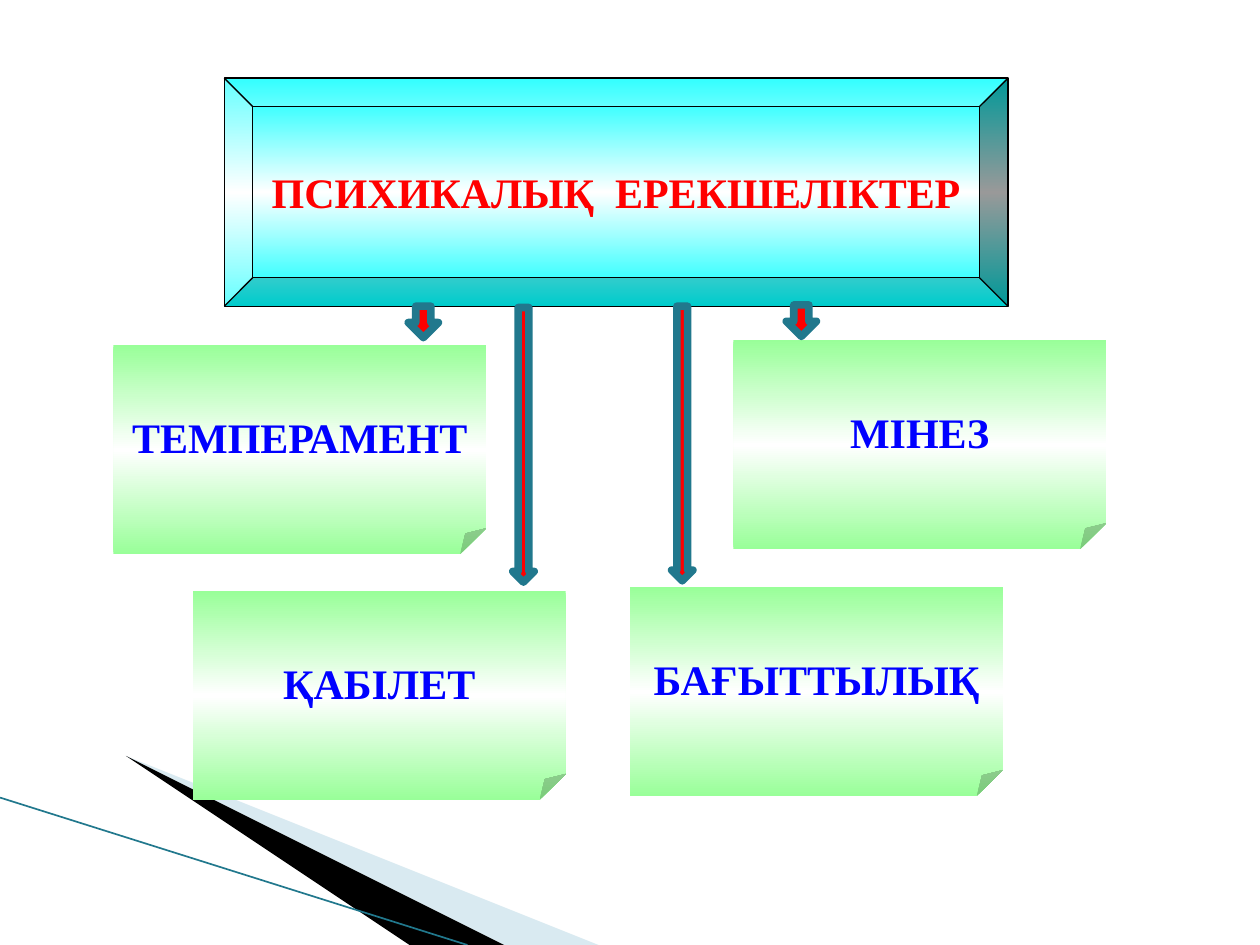
from copy import deepcopy

from lxml import etree
from pptx import Presentation
from pptx import util as u
from pptx.dml.color import RGBColor
from pptx.enum import shapes, text
from pptx.oxml.ns import qn

COLORS = {
    "cyan": "00FFFF", "green": "99FF99", "white": "FFFFFF", "black": "000000",
    "red": "FF0000", "blue": "0000FF", "teal": "21788D", "pale": "A0CBDC",
}
FONT = "Times New Roman"

HEADING = ("ПСИХИКАЛЫҚ  ЕРЕКШЕЛІКТЕР", 1.78, 0.62)
HEADING_SIZE = (6.22, 1.81)
NOTES = [
    ("ТЕМПЕРАМЕНТ", 0.9, 2.74),
    ("МІНЕЗ", 5.82, 2.7),
    ("ҚАБІЛЕТ", 1.53, 4.69),
    ("БАҒЫТТЫЛЫҚ", 5, 4.66),
]
NOTE_SIZE = (2.96, 1.66)

SHORT, LONG = (0.24, 0.25), (0.17, 2.18)
ARROWS = [(3.24, 2.43, SHORT), (6.24, 2.42, SHORT), (4.07, 2.44, LONG), (5.33, 2.43, LONG)]

# Corner points, colour, opacity in percent
WEDGES = [
    ([(0.55, 6.5), (5.95, 7.5), (4.56, 7.5)], "pale", 40),
    ([(0.53, 6.49), (4.57, 7.5), (3.72, 7.5)], "black", 100),
]
EDGE = [(0, 6.33), (3.71, 7.5)]


def rgb(name):
    return RGBColor.from_string(COLORS[name])


def add_preset(slide, kind, left, top, size):
    shape = slide.shapes.add_shape(kind, *map(u.Inches, (left, top, *size)))
    shape.shadow.inherit = False
    return shape


def set_corner(shape, share):
    """Set the bevel or fold depth as a share of the shorter side."""
    guides = shape._element.spPr.find(".//" + qn("a:avLst"))
    for guide in list(guides):
        guides.remove(guide)
    etree.SubElement(guides, qn("a:gd"), name="adj", fmla=f"val {round(share * 100000)}")


def fill_band(shape, color):
    """Vertical gradient: colour, white in the middle, colour again."""
    shape.fill.gradient()
    shape.fill.gradient_angle = 90
    stop_list = shape._element.spPr.find(".//" + qn("a:gsLst"))
    stop_list.insert(1, deepcopy(stop_list[0]))
    names = (color, "white", color)
    for stop, name, position in zip(shape.fill.gradient_stops, names, (0, 0.5, 1)):
        stop.color.rgb = rgb(name)
        stop.position = position


def add_label_shape(slide, kind, label, left, top, size, band, font_color):
    shape = add_preset(slide, kind, left, top, size)
    set_corner(shape, 0.125)
    fill_band(shape, band)
    frame = shape.text_frame
    frame.word_wrap = False
    frame.vertical_anchor = text.MSO_ANCHOR.MIDDLE
    paragraph = frame.paragraphs[0]
    paragraph.alignment = text.PP_ALIGN.CENTER
    run = paragraph.add_run()
    run.text = label
    run.font.name, run.font.size, run.font.bold = FONT, u.Pt(24), True
    run.font.color.rgb = rgb(font_color)
    return shape


def add_wedge(slide, points, color, opacity):
    builder = slide.shapes.build_freeform(*points[0], scale=u.Inches(1))
    builder.add_line_segments(points[1:], close=True)
    wedge = builder.convert_to_shape()
    wedge.shadow.inherit = False
    wedge.fill.solid()
    wedge.fill.fore_color.rgb = rgb(color)
    wedge.line.fill.background()
    if opacity < 100:
        color_element = wedge._element.spPr.find(".//" + qn("a:srgbClr"))
        etree.SubElement(color_element, qn("a:alpha"), val=str(opacity * 1000))


def add_edge(slide, start, end):
    edge = slide.shapes.add_connector(
        shapes.MSO_CONNECTOR.STRAIGHT, *map(u.Inches, (*start, *end)))
    edge.line.color.rgb = rgb("teal")
    edge.line.width = u.Pt(0.95)
    etree.SubElement(edge._element.spPr, qn("a:effectLst"))


def main():
    presentation = Presentation()
    presentation.slide_width, presentation.slide_height = u.Inches(10), u.Inches(7.5)
    slide = presentation.slides.add_slide(presentation.slide_layouts[6])

    for wedge in WEDGES:
        add_wedge(slide, *wedge)
    add_edge(slide, *EDGE)

    preset = shapes.MSO_SHAPE
    heading = add_label_shape(slide, preset.BEVEL, *HEADING, HEADING_SIZE, "cyan", "red")
    heading.line.color.rgb = rgb("black")
    heading.line.width = u.Pt(0.75)

    for note in NOTES:
        shape = add_label_shape(slide, preset.FOLDED_CORNER, *note, NOTE_SIZE, "green", "blue")
        shape.line.fill.background()

    for left, top, size in ARROWS:
        arrow = add_preset(slide, preset.DOWN_ARROW, left, top, size)
        arrow.fill.solid()
        arrow.fill.fore_color.rgb = rgb("red")
        arrow.line.color.rgb = rgb("teal")
        arrow.line.width = u.Pt(4.33)

    presentation.save("out.pptx")


if __name__ == "__main__":
    main()
